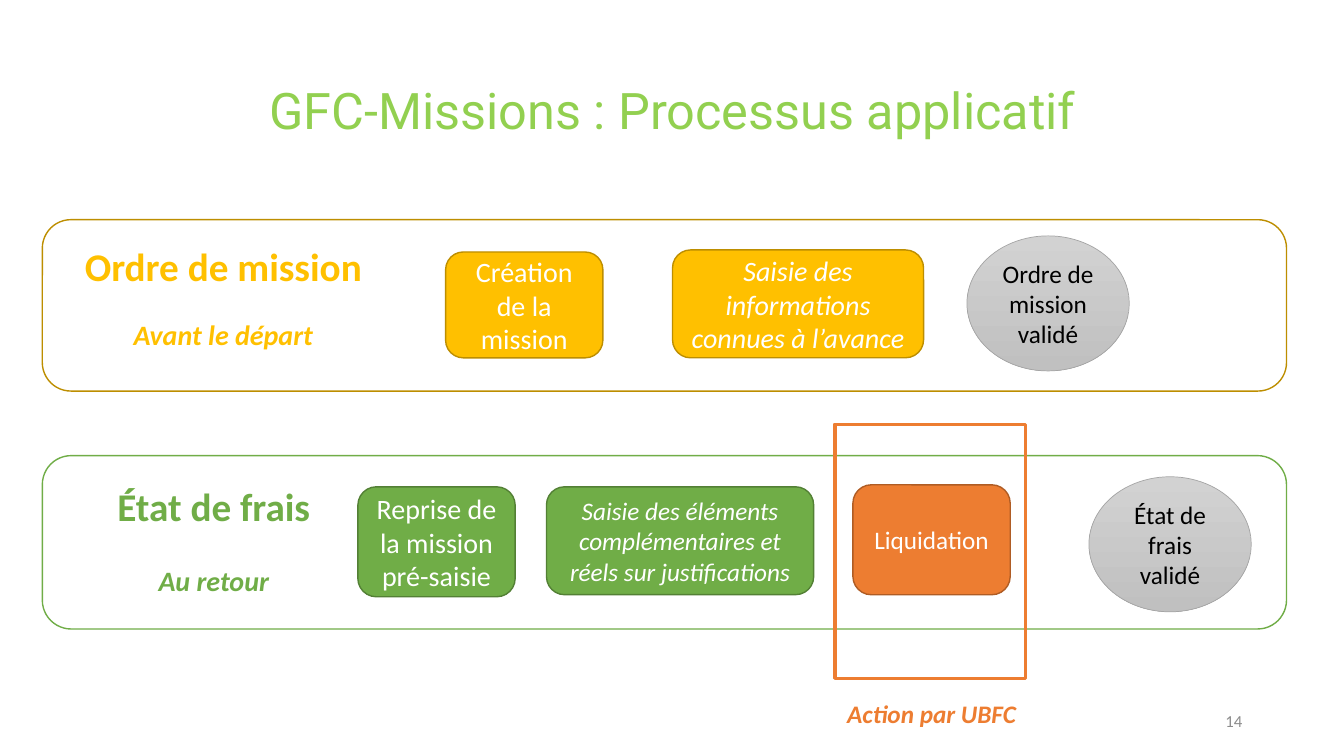
"""Build the GFC-Missions slide: two process lanes, from mission order to expense report."""
from pptx import Presentation
from pptx.dml.color import RGBColor
from pptx.enum.shapes import MSO_SHAPE
from pptx.enum.text import MSO_ANCHOR, PP_ALIGN
from pptx.util import Inches, Pt

ROUNDED, ELLIPSE, RECTANGLE = MSO_SHAPE.ROUNDED_RECTANGLE, MSO_SHAPE.OVAL, MSO_SHAPE.RECTANGLE
MIDDLE, TOP = MSO_ANCHOR.MIDDLE, MSO_ANCHOR.TOP
CENTER, RIGHT = PP_ALIGN.CENTER, PP_ALIGN.RIGHT

COLORS = {
    "title": "92D050", "number": "8C8C8C", "white": "FFFFFF", "black": "000000",
    "gold": "FFC000", "gold_edge": "BD8E00",
    "green": "70AD47", "green_edge": "538035",
    "orange": "ED7D31", "orange_edge": "AF5C24",
    "gray_light": "D2D2D2", "gray_dark": "C0C0C0", "gray_edge": "A5A5A5",
}
LANE_LEFT, LANE_WIDTH = 0.42, 12.34
LABEL_LEFT = 0.68
STEP_WIDTH = 1.56
RESULT_WIDTH, RESULT_HEIGHT = 1.61, 1.34

LANES = [
    {
        "top": 2.18, "height": 1.7, "color": "gold", "frame": "gold_edge",
        "label_width": 3.07, "heading": ("Ordre de mission", 2.35), "moment": ("Avant le départ", 3.1),
        "steps": [
            ("Création de la mission", 4.42, 2.5, STEP_WIDTH, 1.05, "gold", 20, False),
            ("Saisie des informations connues à l’avance", 6.67, 2.48, 2.49, 1.07, "gold", 20, True),
        ],
        "result": ("Ordre de mission\nvalidé", 9.59, 2.34),
    },
    {
        "top": 4.52, "height": 1.72, "color": "green", "frame": "green",
        "label_width": 2.88, "heading": ("État de frais", 4.74), "moment": ("Au retour", 5.54),
        "steps": [
            ("Reprise de la mission pré-saisie", 3.55, 4.83, STEP_WIDTH, 1.09, "green", 20, False),
            ("Saisie des éléments complémentaires et réels sur justifications",
             5.42, 4.83, 2.65, 1.07, "green", 18, True),
            ("Liquidation", 8.46, 4.81, STEP_WIDTH, 1.09, "orange", 18, False),
        ],
        "result": ("État de frais validé", 10.8, 4.73),
    },
]

prs = Presentation()
prs.slide_width, prs.slide_height = Inches(13.33), Inches(7.5)
slide = prs.slides.add_slide(prs.slide_layouts[5])


def write(holder, text, size, color, bold=False, italic=False, align=CENTER, anchor=MIDDLE, font="Calibri"):
    frame = holder.text_frame
    frame.text = text
    frame.word_wrap = True
    frame.vertical_anchor = anchor
    for paragraph in frame.paragraphs:
        paragraph.alignment = align
        paragraph.font.name = font
        paragraph.font.size = Pt(size)
        paragraph.font.bold = bold
        paragraph.font.italic = italic
        paragraph.font.color.rgb = RGBColor.from_string(COLORS[color])


def outline(kind, left, top, width, height, edge, weight=1, fill=None):
    shape = slide.shapes.add_shape(kind, Inches(left), Inches(top), Inches(width), Inches(height))
    shape.shadow.inherit = False
    shape.line.color.rgb = RGBColor.from_string(COLORS[edge])
    shape.line.width = Pt(weight)
    if fill:
        shape.fill.solid()
        shape.fill.fore_color.rgb = RGBColor.from_string(COLORS[fill])
    else:
        shape.fill.background()
    return shape


title = slide.shapes.title
title.left, title.top, title.width, title.height = Inches(0.92), Inches(0.4), Inches(11.5), Inches(1.45)
write(title, "GFC-Missions : Processus applicatif", 36, "title", font="Roboto")
title.text_frame.paragraphs[0].line_spacing = 0.9

for lane in LANES:
    outline(ROUNDED, LANE_LEFT, lane["top"], LANE_WIDTH, lane["height"], lane["frame"])

    for (label, top), size, height, italic in (
        (lane["heading"], 28, 0.57, False),
        (lane["moment"], 20, 0.44, True),
    ):
        caption = slide.shapes.add_textbox(
            Inches(LABEL_LEFT), Inches(top), Inches(lane["label_width"]), Inches(height))
        write(caption, label, size, lane["color"], bold=True, italic=italic, anchor=TOP)

    for label, left, top, width, height, color, size, italic in lane["steps"]:
        step = outline(ROUNDED, left, top, width, height, f"{color}_edge", fill=color)
        write(step, label, size, "white", italic=italic)

    label, left, top = lane["result"]
    result = outline(ELLIPSE, left, top, RESULT_WIDTH, RESULT_HEIGHT, "gray_edge", 0.5)
    result.fill.gradient()
    result.fill.gradient_angle = 270
    for stop, shade, position in zip(result.fill.gradient_stops, ("gray_light", "gray_dark"), (0, 1)):
        stop.color.rgb = RGBColor.from_string(COLORS[shade])
        stop.position = position
    write(result, label, 18, "black")

outline(RECTANGLE, 8.28, 4.21, 1.89, 2.52, "orange", 2.5)
action = slide.shapes.add_textbox(Inches(7.92), Inches(6.88), Inches(2.64), Inches(0.4))
write(action, "Action par UBFC", 18, "orange", bold=True, italic=True, anchor=TOP)

page_number = slide.shapes.add_textbox(Inches(9.42), Inches(6.95), Inches(3), Inches(0.4))
write(page_number, "14", 12, "number", align=RIGHT)

prs.save("out.pptx")
